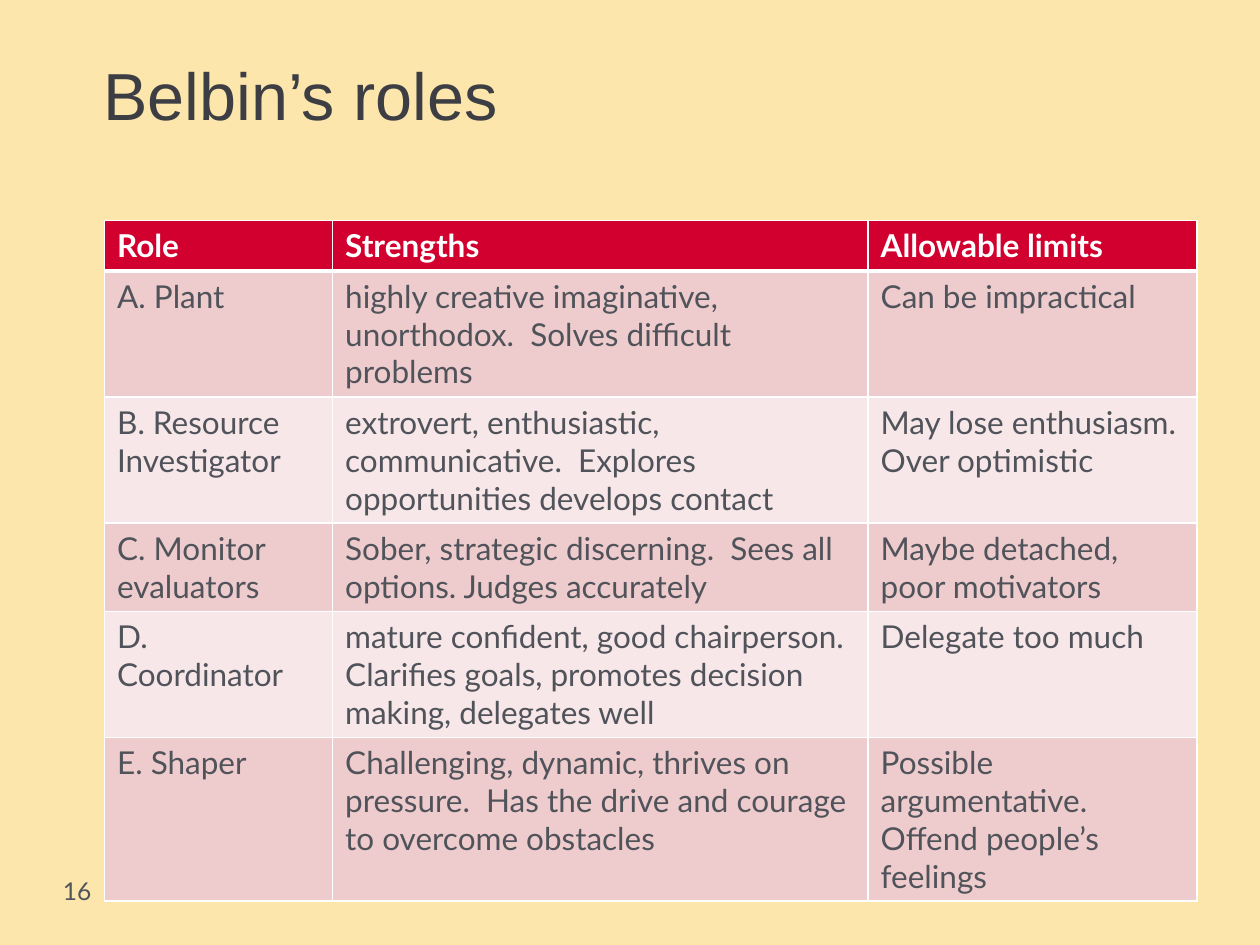
"""Build the slide that tabulates Belbin's team roles."""
from lxml import etree
from pptx import Presentation
from pptx.dml.color import RGBColor
from pptx.enum.text import MSO_ANCHOR
from pptx.oxml.ns import qn
from pptx.util import Inches, Pt

TOP, BOTTOM = MSO_ANCHOR.TOP, MSO_ANCHOR.BOTTOM
CREAM = RGBColor(0xFD, 0xE6, 0xAB)
CHARCOAL = RGBColor(0x3C, 0x3E, 0x44)
GREY = RGBColor(0x50, 0x53, 0x5A)
WHITE = RGBColor(0xFF, 0xFF, 0xFF)
RED = RGBColor(0xD2, 0x00, 0x2E)
ROSE = RGBColor(0xEE, 0xCC, 0xCD)
BLUSH = RGBColor(0xF7, 0xE7, 0xE8)

TITLE = {"name": "Arial", "size": Pt(38), "color": CHARCOAL}
NUMBER = {"name": "Lato", "size": Pt(14), "color": GREY}
BODY = {"name": "Lato", "size": Pt(18), "bold": False, "color": GREY}
HEADER = {**BODY, "bold": True, "color": WHITE}

COLUMN_WIDTHS = (1.81, 4.25, 2.61)
ROW_HEIGHTS = (0.4, 1, 1, 0.7, 1, 1.3)
ROLES = (
    ("Role", "Strengths", "Allowable limits"),
    ("A. Plant",
     "highly creative imaginative, unorthodox.  Solves difficult problems",
     "Can be impractical"),
    ("B. Resource Investigator",
     "extrovert, enthusiastic, communicative.  Explores opportunities develops contact",
     "May lose enthusiasm. Over optimistic"),
    ("C. Monitor evaluators",
     "Sober, strategic discerning.  Sees all options. Judges accurately",
     "Maybe detached, poor motivators"),
    ("D. Coordinator",
     "mature confident, good chairperson.  Clarifies goals, promotes decision making, delegates well",
     "Delegate too much"),
    ("E. Shaper",
     "Challenging, dynamic, thrives on pressure.  Has the drive and courage to overcome obstacles",
     "Possible argumentative. Offend people’s feelings"),
)


class SlideBuilder:
    """Hold the table style and the current slide."""

    def __init__(self, slide):
        self.slide = slide
        self.rule_color = WHITE
        self.bands = (ROSE, BLUSH)
        background = slide.background.fill
        background.solid()
        background.fore_color.rgb = CREAM

    def add_words(self, frame, words, style):
        run = frame.paragraphs[0].add_run()
        run.text = words
        for attribute, value in style.items():
            if attribute == "color":
                run.font.color.rgb = value
            else:
                setattr(run.font, attribute, value)

    def add_text(self, box, words, style, anchor=TOP):
        frame = self.slide.shapes.add_textbox(*map(Inches, box)).text_frame
        layout = {"word_wrap": True, "vertical_anchor": anchor, "margin_left": 0,
                  "margin_top": 0, "margin_right": 0, "margin_bottom": 0}
        for attribute, value in layout.items():
            setattr(frame, attribute, value)
        self.add_words(frame, words, style)

    def add_border(self, cell, side, points):
        line = etree.SubElement(cell._tc.get_or_add_tcPr(), qn(f"a:ln{side}"), w=str(Pt(points)))
        fill = etree.SubElement(line, qn("a:solidFill"))
        etree.SubElement(fill, qn("a:srgbClr"), val=str(self.rule_color))

    def add_table(self, left, top, widths, heights, rows):
        size = map(Inches, (left, top, sum(widths), sum(heights)))
        table = self.slide.shapes.add_table(len(rows), len(widths), *size).table
        for column, width in zip(table.columns, widths):
            column.width = Inches(width)
        for index, (row, height, entries) in enumerate(zip(table.rows, heights, rows)):
            row.height = Inches(height)
            color = self.bands[(index - 1) % 2] if index else RED
            rules = {"L": 1, "R": 1, "T": 3 if index == 1 else 1, "B": 1 if index else 3}
            for cell, words in zip(row.cells, entries):
                for side, points in rules.items():
                    self.add_border(cell, side, points)
                cell.fill.solid()
                cell.fill.fore_color.rgb = color
                self.add_words(cell.text_frame, words, BODY if index else HEADER)


def main():
    deck = Presentation()
    deck.slide_width, deck.slide_height = Inches(10), Inches(7.5)
    builder = SlideBuilder(deck.slides.add_slide(deck.slide_layouts[6]))
    builder.add_text((0.82, 0.15, 9.06, 0.91), "Belbin’s roles", TITLE, BOTTOM)
    builder.add_table(0.83, 1.75, COLUMN_WIDTHS, ROW_HEIGHTS, ROLES)
    builder.add_text((0.5, 6.95, 2.33, 0.4), "16", NUMBER)
    deck.save("out.pptx")


if __name__ == "__main__":
    main()
